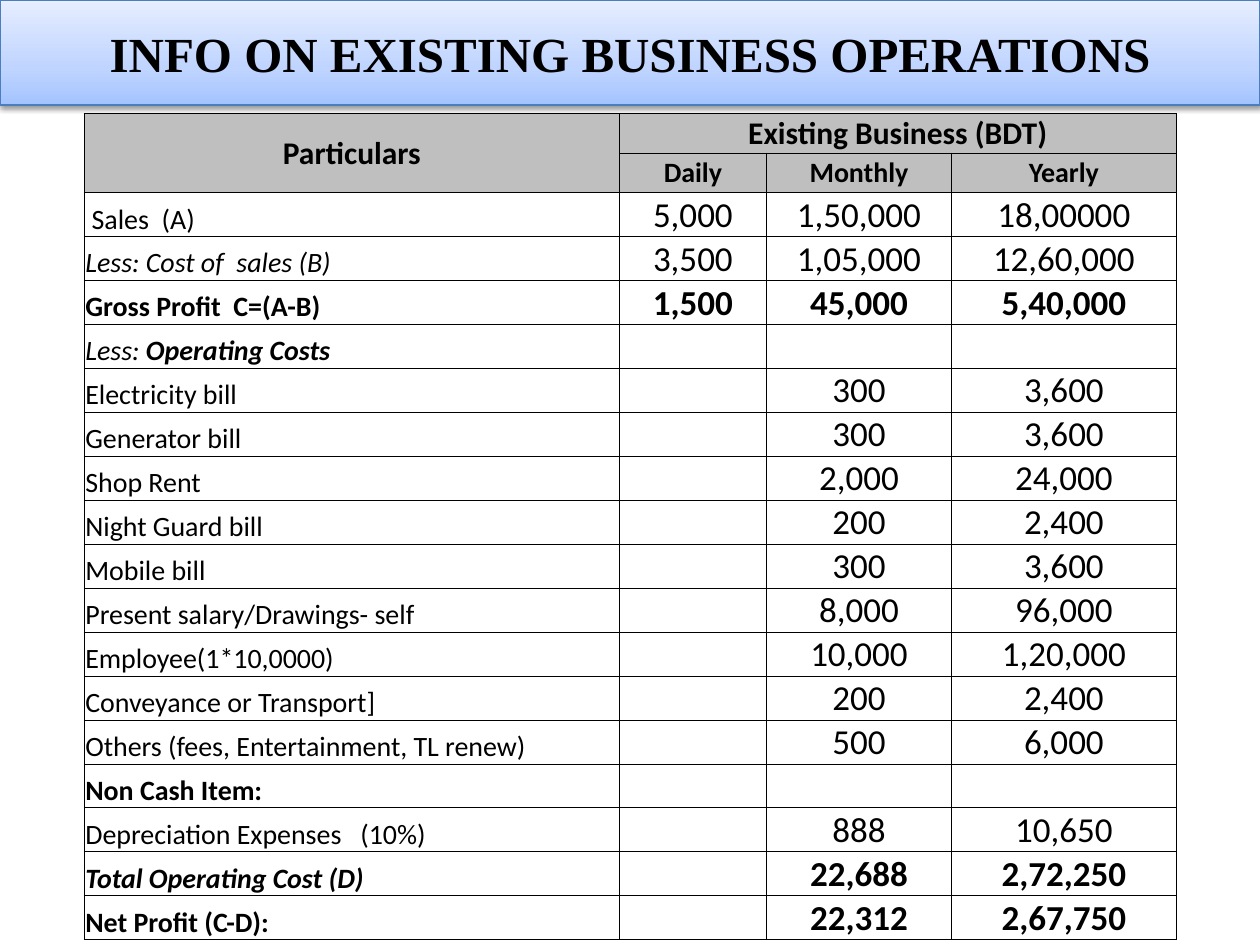
"""Build a slide with the income table of an existing business."""
from dataclasses import dataclass

from lxml import etree
from pptx import Presentation
from pptx.dml.color import RGBColor
from pptx.enum.text import MSO_ANCHOR, PP_ALIGN
from pptx.oxml import parse_xml
from pptx.oxml.ns import qn
from pptx.util import Pt

LEFT, CENTER = PP_ALIGN.LEFT, PP_ALIGN.CENTER
MIDDLE, BOTTOM = MSO_ANCHOR.MIDDLE, MSO_ANCHOR.BOTTOM
NAMESPACE = "http://schemas.openxmlformats.org/drawingml/2006/main"
TITLE_ONLY = 5
BLACK, WHITE, GRAY = "000000", "FFFFFF", "BFBFBF"
TITLE_STOPS = {0: "A4C4FF", 35: "BFD4FF", 100: "E6EEFF"}
COLUMN_WIDTHS = (305.8, 84, 105.9, 128.3)
HEADER_HEIGHTS = (22.3, 22.7)
ROW_HEIGHT = 25.1
CELL_MARGINS = {"margin_left": Pt(0.6), "margin_right": Pt(0.6),
                "margin_top": Pt(0.6), "margin_bottom": 0}


@dataclass(frozen=True)
class Span:
    text: str
    size: float = 16
    bold: bool = False
    italic: bool = False
    font: str = "Calibri"


@dataclass(frozen=True)
class Entry:
    label: tuple[Span, ...]
    values: tuple[str, str, str] = ("", "", "")
    bold: bool = False


def cost(name: str, monthly: str, yearly: str) -> Entry:
    return Entry((Span(name),), ("", monthly, yearly))


ENTRIES = (
    Entry((Span(" Sales  (A)"),), ("5,000", "1,50,000", "18,00000")),
    Entry((Span("Less: Cost of  sales (B)", italic=True),), ("3,500", "1,05,000", "12,60,000")),
    Entry((Span("Gross Profit  C=(A-B)", bold=True),), ("1,500", "45,000", "5,40,000"), True),
    Entry((Span("Less: ", italic=True), Span("Operating Costs", bold=True, italic=True))),
    cost("Electricity bill", "300", "3,600"),
    cost("Generator bill", "300", "3,600"),
    cost("Shop Rent", "2,000", "24,000"),
    cost("Night Guard bill", "200", "2,400"),
    cost("Mobile bill", "300", "3,600"),
    cost("Present salary/Drawings- self", "8,000", "96,000"),
    cost("Employee(1*10,0000)", "10,000", "1,20,000"),
    cost("Conveyance or Transport]", "200", "2,400"),
    cost("Others (fees, Entertainment, TL renew)", "500", "6,000"),
    Entry((Span("Non Cash Item:", bold=True),)),
    cost("Depreciation Expenses   (10%)", "888", "10,650"),
    Entry((Span("Total Operating Cost (D)", bold=True, italic=True),),
          ("", "22,688", "2,72,250"), True),
    Entry((Span("Net Profit (C-D):", bold=True),), ("", "22,312", "2,67,750"), True),
)


def color(value: str) -> RGBColor:
    return RGBColor.from_string(value)


def write(paragraph, spans: tuple[Span, ...], alignment) -> None:
    paragraph.alignment = alignment
    for span in spans:
        run = paragraph.add_run()
        run.text = span.text
        formats = {"size": Pt(span.size), "bold": span.bold,
                   "italic": span.italic, "name": span.font}
        for name, value in formats.items():
            setattr(run.font, name, value)
        run.font.color.rgb = color(BLACK)


def add_borders(cell) -> None:
    properties = cell._tc.get_or_add_tcPr()
    for index, side in enumerate("LRTB"):
        border = parse_xml(
            f'<a:ln{side} xmlns:a="{NAMESPACE}" w="{Pt(0.5)}"><a:solidFill>'
            f'<a:srgbClr val="{BLACK}"/></a:solidFill></a:ln{side}>')
        properties.insert(index, border)


def fill_cell(cell, spans: tuple[Span, ...], fill: str, alignment, anchor) -> None:
    for name, value in CELL_MARGINS.items():
        setattr(cell, name, value)
    cell.vertical_anchor = anchor
    cell.fill.solid()
    cell.fill.fore_color.rgb = color(fill)
    write(cell.text_frame.paragraphs[0], spans, alignment)


def add_title(page) -> None:
    title = page.shapes.title
    place = {"left": 0, "top": 0, "width": Pt(720), "height": Pt(60)}
    for name, value in place.items():
        setattr(title, name, value)
    title.fill.gradient()
    title.fill.gradient_angle = 90
    stops = title._element.spPr.find(f".//{qn('a:gsLst')}")
    for stop in list(stops):
        stops.remove(stop)
    for position, value in TITLE_STOPS.items():
        stop = etree.SubElement(stops, qn("a:gs"), pos=str(position * 1000))
        etree.SubElement(stop, qn("a:srgbClr"), val=value)
    title.line.color.rgb = color("4B7EBC")
    title.line.width = Pt(0.75)
    title._element.spPr.append(parse_xml(
        f'<a:effectLst xmlns:a="{NAMESPACE}"><a:outerShdw blurRad="{Pt(3.1)}" '
        f'dist="{Pt(1.6)}" dir="5400000" rotWithShape="0"><a:srgbClr val="{BLACK}">'
        '<a:alpha val="38000"/></a:srgbClr></a:outerShdw></a:effectLst>'))
    title.text_frame.vertical_anchor = MIDDLE
    heading = Span("INFO ON EXISTING BUSINESS OPERATIONS", 28, True, font="Times New Roman")
    write(title.text_frame.paragraphs[0], (heading,), CENTER)


def add_income_table(page) -> None:
    heights = HEADER_HEIGHTS + (ROW_HEIGHT,) * len(ENTRIES)
    frame = page.shapes.add_table(len(heights), len(COLUMN_WIDTHS), Pt(48.2), Pt(64.8),
                                  Pt(sum(COLUMN_WIDTHS)), Pt(sum(heights)))
    table = frame.table
    table.first_row = table.horz_banding = False
    for column, width in zip(table.columns, COLUMN_WIDTHS):
        column.width = Pt(width)
    for row, height in zip(table.rows, heights):
        row.height = Pt(height)
    headers = (("Particulars", "Existing Business (BDT)", "", ""),
               ("", "Daily", "Monthly", "Yearly"))
    for row, (names, size) in enumerate(zip(headers, (18, 16))):
        for column, name in enumerate(names):
            spans = (Span(name, size, True),) if name else ()
            fill_cell(table.cell(row, column), spans, GRAY, CENTER, MIDDLE)
    for row, entry in enumerate(ENTRIES, len(headers)):
        fill_cell(table.cell(row, 0), entry.label, WHITE, LEFT, BOTTOM)
        for column, value in enumerate(entry.values, 1):
            spans = (Span(value, 20, entry.bold),) if value else ()
            fill_cell(table.cell(row, column), spans, WHITE, CENTER, BOTTOM)
    for cell in table.iter_cells():
        add_borders(cell)
    table.cell(0, 0).merge(table.cell(1, 0))
    table.cell(0, 1).merge(table.cell(0, 3))


def main() -> None:
    deck = Presentation()
    deck.slide_width, deck.slide_height = Pt(720), Pt(540)
    page = deck.slides.add_slide(deck.slide_layouts[TITLE_ONLY])
    add_title(page)
    add_income_table(page)
    deck.save("out.pptx")


if __name__ == "__main__":
    main()
